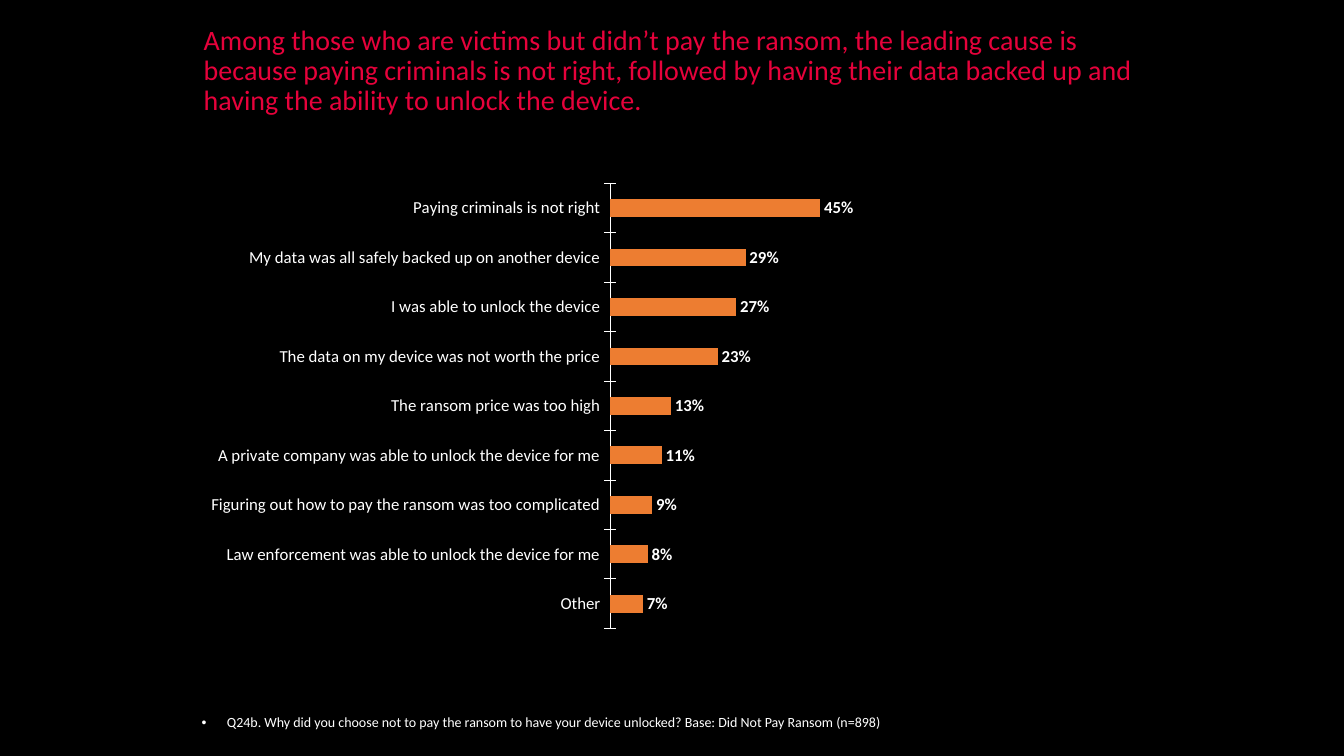
from lxml.etree import SubElement
from pptx import Presentation
from pptx.chart.data import CategoryChartData
from pptx.dml.color import RGBColor
from pptx.enum.chart import XL_CHART_TYPE, XL_LABEL_POSITION, XL_TICK_MARK
from pptx.enum.text import MSO_ANCHOR, MSO_AUTO_SIZE, PP_ALIGN
from pptx.oxml import parse_xml
from pptx.oxml.ns import nsdecls, qn
from pptx.util import Cm, Pt

FONT = "Calibri"
BLACK, WHITE, RED, ORANGE = "000000", "FFFFFF", "E6023B", "ED7D31"

TITLE = (
    "Among those who are victims but didn’t pay the ransom, the leading cause is "
    "because paying criminals is not right, followed by having their data backed up "
    "and having the ability to unlock the device."
)
NOTE = (
    "Q24b. Why did you choose not to pay the ransom to have your device unlocked? "
    "Base: Did Not Pay Ransom (n=898)"
)
REASONS = {
    "Paying criminals is not right": 0.45,
    "My data was all safely backed up on another device": 0.29,
    "I was able to unlock the device": 0.27,
    "The data on my device was not worth the price": 0.23,
    "The ransom price was too high": 0.13,
    "A private company was able to unlock the device for me": 0.11,
    "Figuring out how to pay the ransom was too complicated": 0.09,
    "Law enforcement was able to unlock the device for me": 0.08,
    "Other": 0.07,
}


def rgb(value):
    return RGBColor.from_string(value)


def style_font(font, size, color, bold=False):
    font.name, font.size, font.bold = FONT, Pt(size), bold
    font.color.rgb = rgb(color)


def fill_text(tf, text, size, color, anchor, spacing):
    tf.word_wrap = True
    tf.auto_size = MSO_AUTO_SIZE.NONE
    tf.vertical_anchor = anchor
    p = tf.paragraphs[0]
    p.alignment = PP_ALIGN.LEFT
    p.line_spacing = spacing
    r = p.add_run()
    r.text = text
    style_font(r.font, size, color)
    return p


def add_title(slide, left, top, width, height):
    sp = slide.shapes.title
    sp.left, sp.top, sp.width, sp.height = left, top, width, height
    fill_text(sp.text_frame, TITLE, 20, RED, MSO_ANCHOR.MIDDLE, 0.9)


def add_note(slide, left, top, width, height):
    sp = slide.shapes.add_textbox(left, top, width, height)
    p = fill_text(sp.text_frame, NOTE, 10, WHITE, MSO_ANCHOR.BOTTOM, 0.95)
    p.space_before = Pt(2)
    # Hanging bullet
    pPr = p._p.get_or_add_pPr()
    indent = Cm(0.64)
    pPr.set("marL", str(indent))
    pPr.set("indent", str(-indent))
    SubElement(pPr, qn("a:buFont"), typeface="Arial")
    SubElement(pPr, qn("a:buChar"), char="•")


def set_plot_area(chart, x, y, w, h):
    """Fix the inner plot area, in fractions of the chart."""
    plot_area = chart._chartSpace.chart.plotArea
    for old in plot_area.findall(qn("c:layout")):
        plot_area.remove(old)
    sizes = "".join(
        f'<c:{tag} val="{val}"/>' for tag, val in zip("xywh", (x, y, w, h))
    )
    plot_area.insert(0, parse_xml(
        f'<c:layout {nsdecls("c")}><c:manualLayout><c:layoutTarget val="inner"/>'
        f'<c:xMode val="edge"/><c:yMode val="edge"/>{sizes}'
        "</c:manualLayout></c:layout>"
    ))


def add_reasons_chart(slide, left, top, width, height):
    data = CategoryChartData(number_format="0%")
    data.categories = list(REASONS)
    data.add_series("Series 1", list(REASONS.values()))
    chart = slide.shapes.add_chart(
        XL_CHART_TYPE.BAR_CLUSTERED, left, top, width, height, data
    ).chart
    chart.has_legend = False
    chart.has_title = False
    style_font(chart.font, 10, WHITE)
    set_plot_area(chart, 0.46, 0.02, 0.52, 0.96)

    # Axes
    reasons = chart.category_axis
    reasons.reverse_order = True
    reasons.major_tick_mark = XL_TICK_MARK.CROSS
    reasons.minor_tick_mark = XL_TICK_MARK.NONE
    reasons.format.line.color.rgb = rgb(WHITE)
    reasons.format.line.width = Pt(0.75)
    style_font(reasons.tick_labels.font, 12, WHITE)
    share = chart.value_axis
    share.minimum_scale, share.maximum_scale = 0, 1
    share.has_major_gridlines = False
    share.visible = False

    # Bars and their labels
    plot = chart.plots[0]
    plot.gap_width = 178
    plot.vary_by_categories = False
    bars = plot.series[0]
    bars.format.fill.solid()
    bars.format.fill.fore_color.rgb = rgb(ORANGE)
    labels = bars.data_labels
    labels.show_value = True
    labels.number_format = "0%"
    labels.number_format_is_linked = False
    labels.position = XL_LABEL_POSITION.OUTSIDE_END
    style_font(labels.font, 12, WHITE, bold=True)


def main():
    prs = Presentation()
    prs.slide_width, prs.slide_height = Cm(33.87), Cm(19.05)
    slide = prs.slides.add_slide(prs.slide_layouts.get_by_name("Title Only"))
    slide.background.fill.solid()
    slide.background.fill.fore_color.rgb = rgb(BLACK)

    add_title(slide, Cm(4.88), Cm(0.64), Cm(24.03), Cm(2.31))
    add_reasons_chart(slide, Cm(4.98), Cm(4.39), Cm(22.61), Cm(11.68))
    add_note(slide, Cm(4.83), Cm(17.88), Cm(20.17), Cm(0.66))
    prs.save("out.pptx")


if __name__ == "__main__":
    main()
